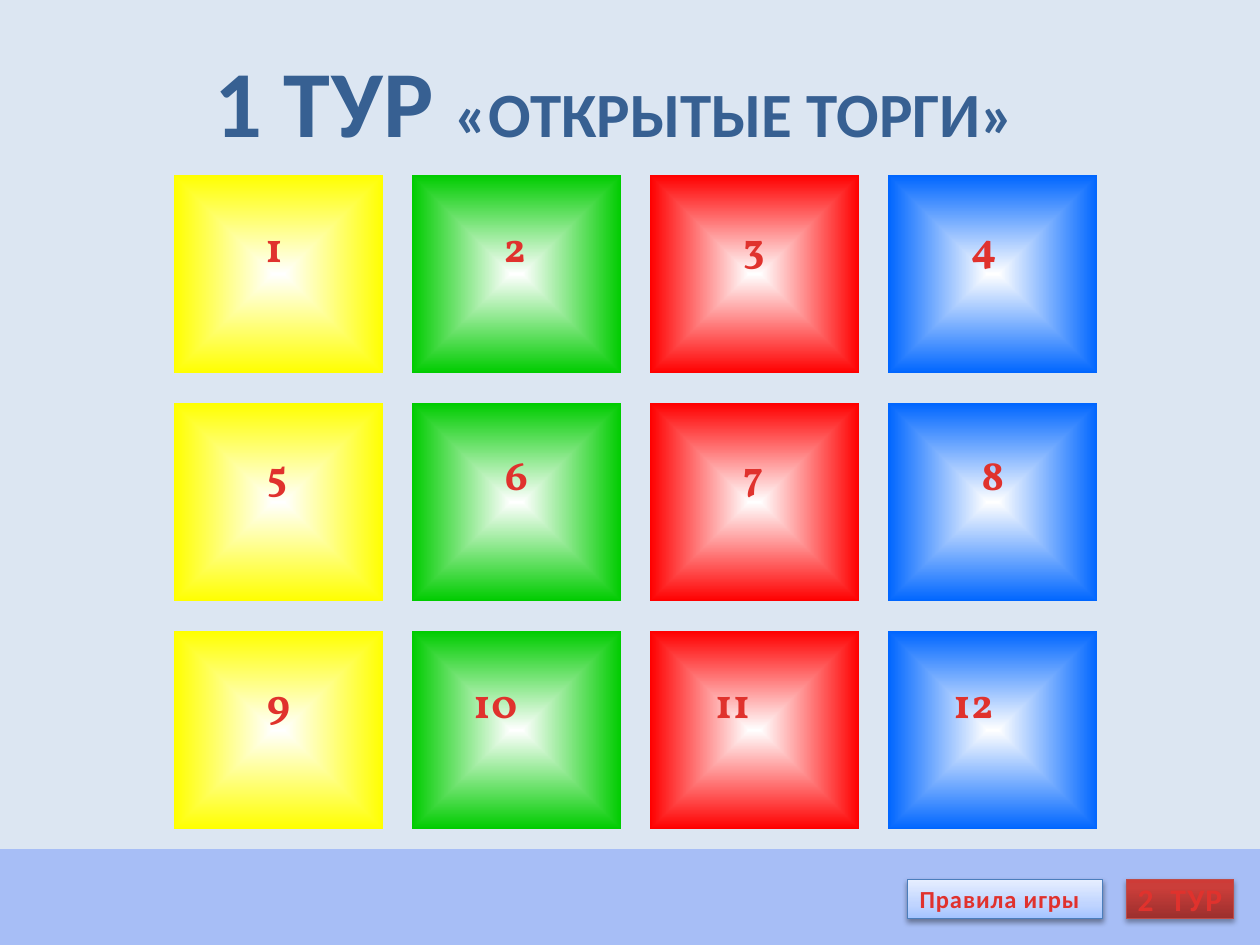
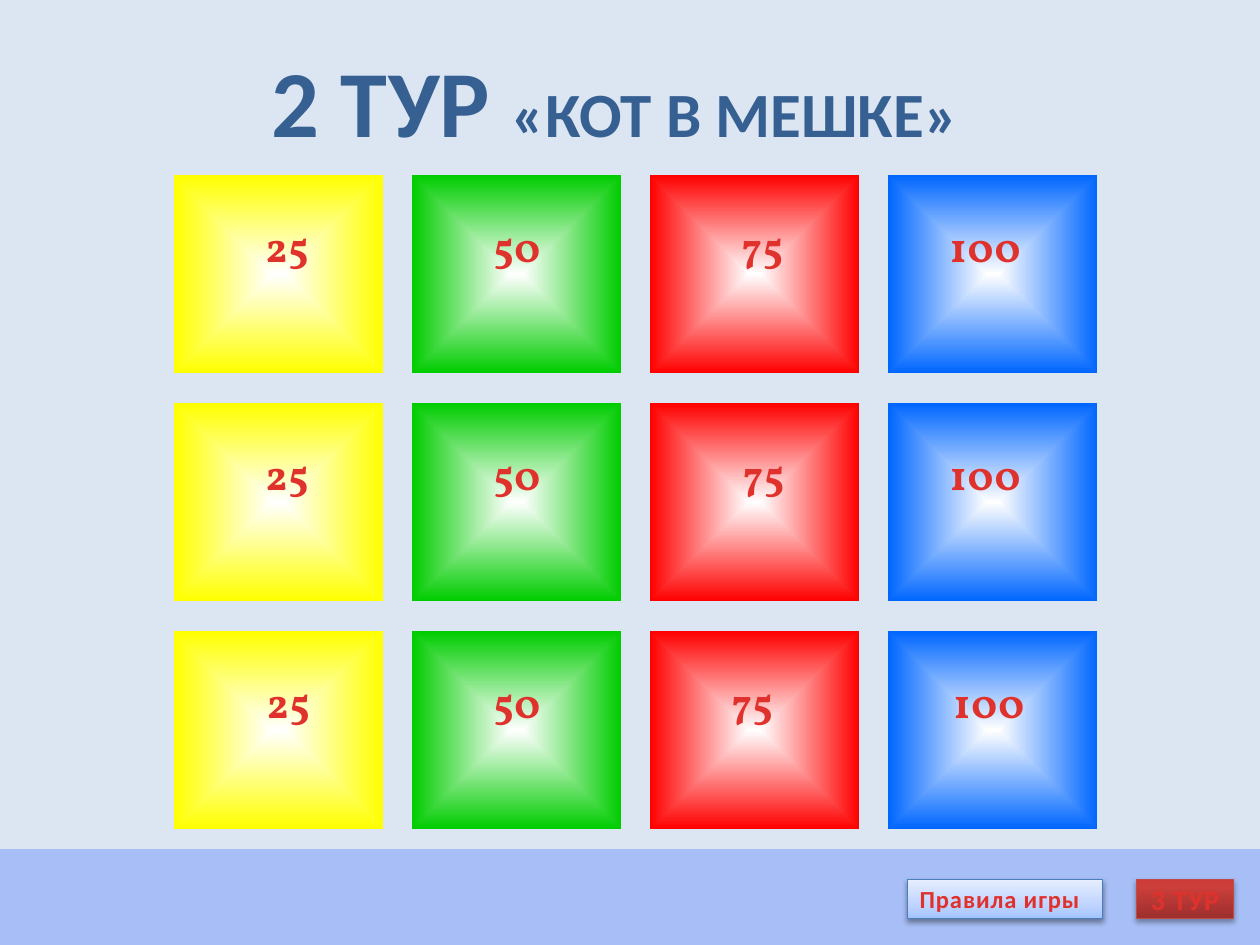
from lxml import etree
from pptx import Presentation
from pptx.dml.color import RGBColor
from pptx.enum.shapes import MSO_SHAPE
from pptx.enum.text import MSO_ANCHOR, MSO_AUTO_SIZE, PP_ALIGN
from pptx.util import Inches, Pt

RECT, TILE = MSO_SHAPE.RECTANGLE, MSO_SHAPE.ACTION_BUTTON_CUSTOM
LEFT, CENTER = PP_ALIGN.LEFT, PP_ALIGN.CENTER
TOP, MIDDLE = MSO_ANCHOR.TOP, MSO_ANCHOR.MIDDLE
GROW = MSO_AUTO_SIZE.SHAPE_TO_FIT_TEXT
NS = "http://schemas.openxmlformats.org/drawingml/2006/main"

WIDE, HIGH = 10, 7.5
GRID_X, GRID_Y = 1.38, 1.39
STEP_X, STEP_Y = 1.89, 1.81
TILE_W, TILE_H = 1.66, 1.57
BAND_Y, KEY_Y, KEY_H, KEY_END = 6.74, 6.98, 0.31, 9.79

BACK, TITLE, EDGE = "DCE6F2", "376092", "467AB8"
CORE = '<a:path path="rect"><a:fillToRect l="50000" t="50000" r="50000" b="50000"/></a:path>'
DOWN, UP = ('<a:lin ang="%d" scaled="0"/>' % (turn * 60000) for turn in (90, 270))
HUES = ["FFFF00", "00CC00", "FF0000", "0066FF"]
INK = ([(25, "E0322D"), (100, "A2201C")], DOWN)
BLUE = ([(0, "A4C4FF"), (35, "BFD4FF"), (100, "E6EEFF")], UP)
RED = ([(0, "9C2F2D"), (80, "CB3E3A"), (100, "CE3B37")], UP)
SHADE = ('<a:outerShdw xmlns:a="%s" blurRad="39370" dist="%d" dir="5400000" rotWithShape="0">'
         '<a:srgbClr val="000000"><a:alpha val="%d"/></a:srgbClr></a:outerShdw>')

# Each row: label and its indent from the left of the tile
TOURS = [
    {"name": "1 ТУР ", "theme": "«ОТКРЫТЫЕ ТОРГИ»",
     "next": "2  ТУР", "size": 18, "key": 0.85, "wide": {1: 0.46, 2: 0.91},
     "rows": [[("1", 0.63), ("2", 0.63), ("3", 0.64), ("4", 0.56)],
              [("5", 0.64), ("6", 0.64), ("7", 0.64), ("8", 0.64)],
              [("9", 0.64), ("10", 0.39), ("11", 0.42), ("12", 0.42)]]},
    {"name": "2 ТУР ", "theme": "«КОТ В МЕШКЕ»",
     "next": "3 ТУР", "size": 16, "key": 0.77, "wide": {2: 0.6, 3: 0.87},
     "rows": [[("25", 0.63), ("50", 0.55), ("75", 0.63), ("100", 0.39)],
              [("25", 0.63), ("50", 0.55), ("75", 0.64), ("100", 0.39)],
              [("25", 0.64), ("50", 0.55), ("75", 0.55), ("100", 0.42)]]},
]


def paint(node, place, stops, aim="", alpha=100):
    """Insert a solid fill for one hex string, or a gradient for a list of stops."""
    if isinstance(stops, str):
        xml = (f'<a:solidFill xmlns:a="{NS}"><a:srgbClr val="{stops}">'
               f'<a:alpha val="{alpha * 1000}"/></a:srgbClr></a:solidFill>')
    else:
        marks = "".join(f'<a:gs pos="{at * 1000}"><a:srgbClr val="{hue}"/></a:gs>'
                        for at, hue in stops)
        xml = (f'<a:gradFill xmlns:a="{NS}" rotWithShape="1">'
               f'<a:gsLst>{marks}</a:gsLst>{aim}</a:gradFill>')
    node.insert(place, etree.fromstring(xml))


def write(shape, runs, font, ink, align=LEFT, anchor=TOP, wrap=False):
    """Fill the shape with one paragraph of (text, size) runs and return the run properties."""
    frame = shape.text_frame
    for key, value in {"word_wrap": wrap, "vertical_anchor": anchor}.items():
        setattr(frame, key, value)
    para = frame.paragraphs[0]
    para.alignment = align
    marks = []
    for text, size in runs:
        run = para.add_run()
        run.text = text
        for key, value in {"name": font, "size": Pt(size), "bold": True}.items():
            setattr(run.font, key, value)
        mark = run._r.get_or_add_rPr()
        paint(mark, 0, *ink)
        marks.append(mark)
    return marks


deck = Presentation()
deck.slide_width, deck.slide_height = Inches(WIDE), Inches(HIGH)

for tour in TOURS:
    slide = deck.slides.add_slide(deck.slide_layouts[6])
    slide.background.fill.solid()
    slide.background.fill.fore_color.rgb = RGBColor.from_string(BACK)
    shapes = slide.shapes

    # Tiles and their numbers
    for row, cells in enumerate(tour["rows"]):
        for col, (label, indent) in enumerate(cells):
            x, y = GRID_X + col * STEP_X, GRID_Y + row * STEP_Y
            tile = shapes.add_shape(TILE, *map(Inches, (x, y, TILE_W, TILE_H)))
            tile.shadow.inherit = False
            tile.line.fill.background()
            paint(tile._element.spPr, 2, [(0, "FFFFFF"), (100, HUES[col])], CORE)
            box = (x + indent, y + 0.31, tour["wide"][len(label)], 0.87)
            note = shapes.add_textbox(*map(Inches, box))
            for mark in write(note, [(label, 24)], "Vollkorn", INK):
                mark.set("spc", "50")

    # Bottom band
    band = shapes.add_shape(RECT, *map(Inches, (0, BAND_Y, WIDE, HIGH - BAND_Y)))
    band.shadow.inherit = False
    band.line.fill.background()
    paint(band._element.spPr, 2, "3366FF", alpha=31)

    # Buttons on the band
    keys = [("Правила игры", 14, 7.2, 1.55, BLUE, "4B7EBC", LEFT, (20320, 38000)),
            (tour["next"], tour["size"], KEY_END - tour["key"], tour["key"],
             RED, "BF4C48", CENTER, (22860, 35000))]
    for text, size, x, wide, fill, edge, align, drop in keys:
        key = shapes.add_shape(RECT, *map(Inches, (x, KEY_Y, wide, KEY_H)))
        key.line.color.rgb = RGBColor.from_string(edge)
        key.line.width = Pt(0.75)
        key.shadow.inherit = False
        props = key._element.spPr
        paint(props, 2, *fill)
        props.find(f"{{{NS}}}effectLst").append(etree.fromstring(SHADE % (NS, *drop)))
        for mark in write(key, [(text, size)], "Calibri", INK, align, MIDDLE):
            mark.set("spc", "50")

    # Title
    head = shapes.add_textbox(*map(Inches, (0.35, 0.29, 9.06, 1.01)))
    runs = [(tour["name"], 54), (tour["theme"], 36)]
    for mark in write(head, runs, "Calibri", (TITLE,), CENTER, wrap=True):
        line = etree.Element(f"{{{NS}}}ln", w="10541")
        paint(line, 0, EDGE)
        mark.insert(0, line)
    head.text_frame.auto_size = GROW

deck.save("out.pptx")
